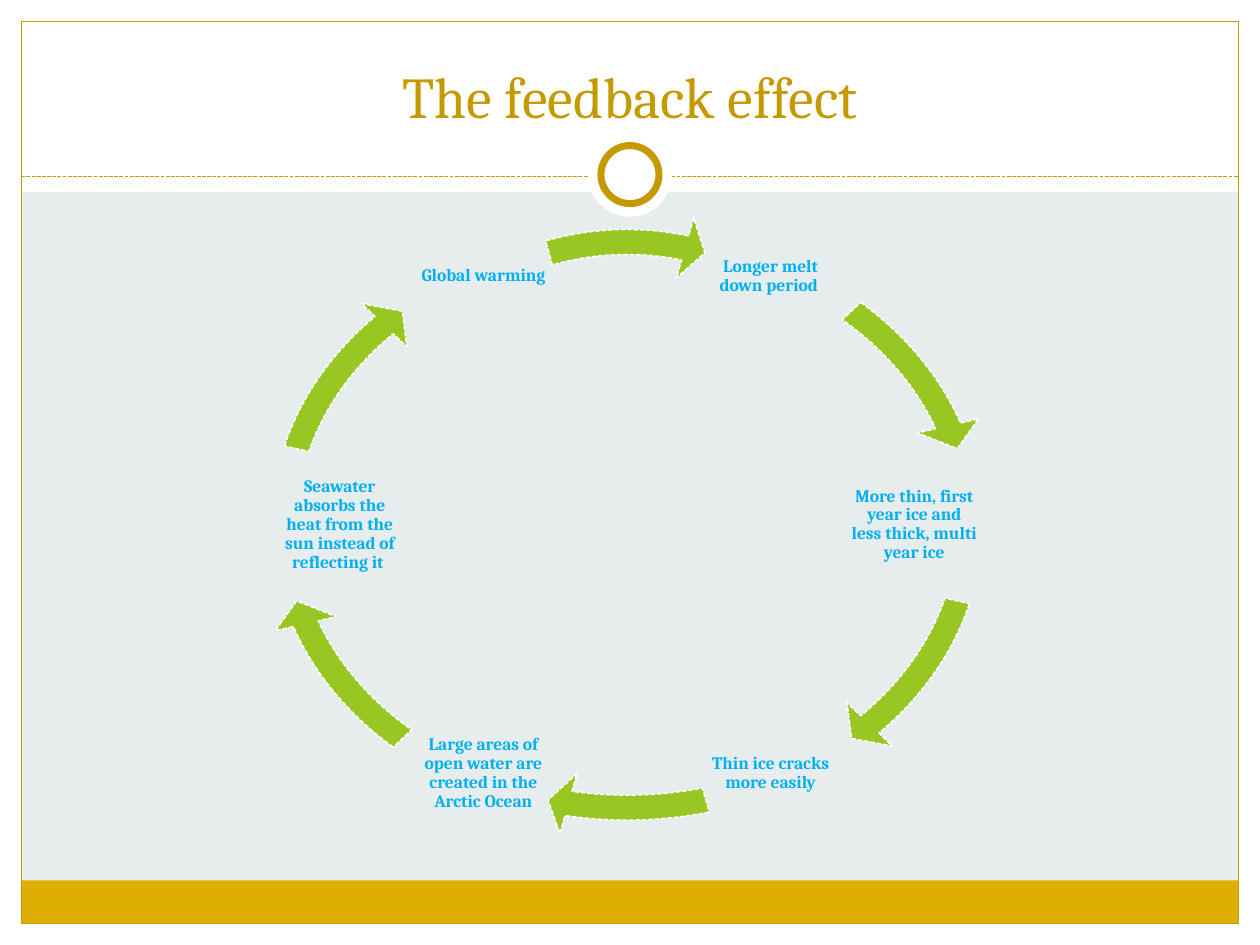
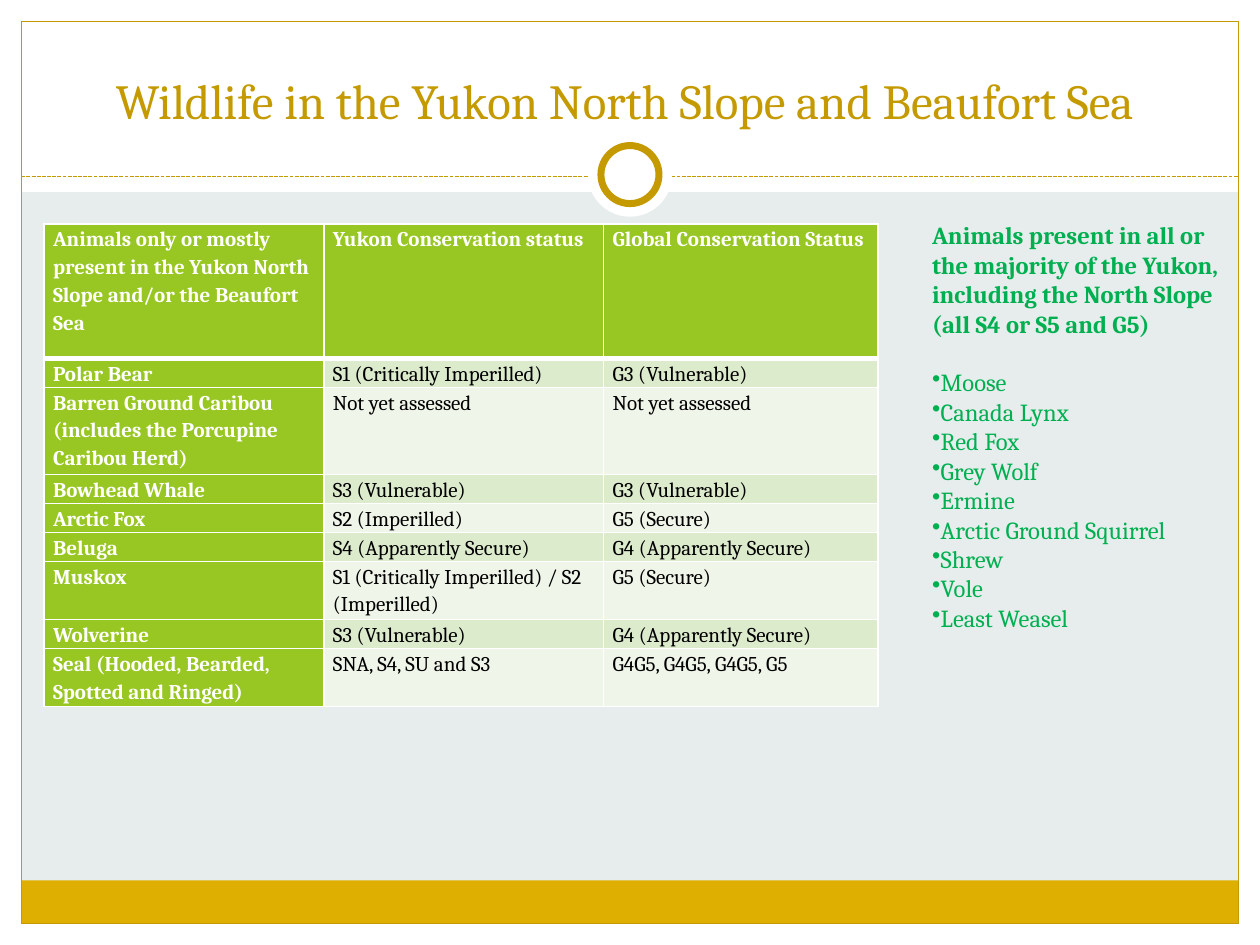
import math

from lxml import etree
from pptx import Presentation
from pptx import util as u
from pptx.dml.color import RGBColor
from pptx.enum import dml, shapes, text
from pptx.oxml import ns

# Content
FEEDBACK_TITLE = "The feedback effect"
FEEDBACK_STEPS = [  # clockwise, from the upper right
    "Longer melt down period ",
    "More thin, first year ice and less thick, multi year ice",
    "Thin ice cracks more easily",
    "Large areas of open water are created in the Arctic Ocean",
    "Seawater absorbs the heat from the sun instead of reflecting it ",
    "Global warming",
]

WILDLIFE_TITLE = "Wildlife in the Yukon North Slope and Beaufort Sea "
STATUS_HEADER = (
    "Animals only or mostly present in the Yukon North Slope and/or the Beaufort Sea",
    "Yukon Conservation status",
    "Global Conservation Status",
)
STATUS_ROWS = [  # text lines in the row, then its cells
    (1, ("Polar Bear", "S1 (Critically Imperilled)", "G3 (Vulnerable)")),
    (3, ("Barren Ground Caribou (includes the Porcupine Caribou Herd)",
         "Not yet assessed", "Not yet assessed")),
    (1, ("Bowhead Whale", "S3 (Vulnerable)", "G3 (Vulnerable)")),
    (1, ("Arctic Fox", "S2 (Imperilled)", "G5 (Secure)")),
    (1, ("Beluga", "S4 (Apparently Secure)", "G4 (Apparently Secure)")),
    (2, ("Muskox", "S1 (Critically Imperilled) / S2 (Imperilled)", "G5 (Secure)")),
    (1, ("Wolverine", "S3 (Vulnerable)", "G4 (Apparently Secure)")),
    (2, ("Seal (Hooded, Bearded, Spotted and Ringed)",
         "SNA, S4, SU and S3", "G4G5, G4G5, G4G5, G5")),
]
COMMON_HEADING = ("Animals present in all or the majority of the Yukon, "
                  "including the North Slope (all S4 or S5 and G5)")
COMMON_ANIMALS = ["Moose", "Canada Lynx", "Red Fox", "Grey Wolf", "Ermine",
                  "Arctic Ground Squirrel", "Shrew", "Vole", "Least Weasel"]

# Shared look, lengths in cm
FONT = "Cambria"
WHITE, BLACK, GROUND = "FFFFFF", "000000", "E7ECED"
GOLD, AMBER, GREEN = "C49A00", "DEAE00", "98C723"
SKY, LEAF = "00B0F0", "00B050"
STRIPES = ("DDEBCD", "EFF5E8")
WIDTH, HEIGHT, MARGIN = 25.4, 19.05, 0.43
RULE_Y, RING_Y = 3.56, 3.52
SHAPE = shapes.MSO_SHAPE
SYS_DASH = dml.MSO_LINE.SQUARE_DOT


def rgb(color):
    return RGBColor.from_string(color)


def box(left, top, width, height):
    return [u.Cm(length) for length in (left, top, width, height)]


def set_line(line, color, points, dash=None):
    line.color.rgb = rgb(color)
    line.width = u.Pt(points)
    if dash:
        line.dash_style = dash


def add_shape(slide, kind, place, fill=None, line=None):
    shape = slide.shapes.add_shape(kind, *box(*place))
    shape.shadow.inherit = False
    if fill:
        shape.fill.solid()
        shape.fill.fore_color.rgb = rgb(fill)
    else:
        shape.fill.background()
    if line:
        set_line(shape.line, *line)
    else:
        shape.line.fill.background()
    return shape


def style(paragraph, size, color, bold=False, align=text.PP_ALIGN.LEFT, spacing=None):
    paragraph.font.name = FONT
    paragraph.font.size = u.Pt(size)
    paragraph.font.color.rgb = rgb(color)
    paragraph.font.bold = bold
    paragraph.alignment = align
    if spacing:
        paragraph.line_spacing = spacing


def add_text(slide, place, words, anchor, **look):
    frame = slide.shapes.add_textbox(*box(*place)).text_frame
    frame.word_wrap = True
    frame.vertical_anchor = anchor
    frame.text = words
    style(frame.paragraphs[0], **look)
    return frame


def add_slide(deck, title, title_size):
    slide = deck.slides.add_slide(deck.slide_layouts[6])
    slide.background.fill.solid()
    slide.background.fill.fore_color.rgb = rgb(GROUND)

    # White edges, bottom band and frame
    inner = WIDTH - 2 * MARGIN
    for edge in [(0, HEIGHT - MARGIN, WIDTH, MARGIN), (0, 0, WIDTH, 3.87),
                 (0, 0, MARGIN, HEIGHT), (WIDTH - MARGIN, 0, MARGIN, HEIGHT)]:
        add_shape(slide, SHAPE.RECTANGLE, edge, WHITE)
    add_shape(slide, SHAPE.RECTANGLE, (MARGIN, 17.75, inner, 0.87), AMBER)
    add_shape(slide, SHAPE.RECTANGLE, (MARGIN, MARGIN, inner, HEIGHT - 2 * MARGIN),
              line=(GOLD, 0.75))

    # Dashed rule with the ring on it
    rule = slide.shapes.add_connector(
        shapes.MSO_CONNECTOR.STRAIGHT,
        *box(MARGIN, RULE_Y, WIDTH - MARGIN, RULE_Y))
    set_line(rule.line, GOLD, 0.75, SYS_DASH)
    etree.SubElement(rule._element.spPr, ns.qn("a:effectLst"))
    for size, line in [(1.7, None), (1.17, (GOLD, 4))]:
        add_shape(slide, SHAPE.OVAL,
                  (WIDTH / 2 - size / 2, RING_Y - size / 2, size, size), WHITE, line)

    add_text(slide, (0.85, 0.64, 23.7, 2.1), title, text.MSO_ANCHOR.BOTTOM,
             size=title_size, color=GOLD, align=text.PP_ALIGN.CENTER)
    return slide


def build_feedback(deck):
    slide = add_slide(deck, FEEDBACK_TITLE, 33)
    center_x, center_y, radius, label = 12.64, 10.58, 5.79, 2.59
    cycle_height = 12.67
    half_turn = [(316.4, 342.87), (12.96, 39.42), (73.99, 101.84)]  # degrees

    for i, step in enumerate(FEEDBACK_STEPS):
        # Labels sit every 60 degrees on a circle
        angle = math.radians(60 * (i - 1))
        x = center_x + radius * math.cos(angle)
        y = center_y + radius * math.sin(angle)
        frame = add_text(slide, (x - label / 2, y - label / 2, label, label), step,
                         text.MSO_ANCHOR.MIDDLE, size=10, color=SKY, bold=True,
                         align=text.PP_ALIGN.CENTER, spacing=0.9)
        frame.margin_left = frame.margin_right = u.Cm(0.02)
        frame.margin_top = frame.margin_bottom = u.Cm(0.02)

        # Arrow to the next label; only the last one is round
        last = i == len(FEEDBACK_STEPS) - 1
        cycle_width = cycle_height if last else 15.09
        arrow = add_shape(slide, SHAPE.CIRCULAR_ARROW,
                          (center_x - cycle_width / 2, center_y - cycle_height / 2,
                           cycle_width, cycle_height),
                          GREEN, (WHITE, 0.9, SYS_DASH))
        start, end = [(a + 180 * (i // 3)) % 360 for a in half_turn[i % 3]]
        # Adjustments count angles in units of 5/3 degree
        for k, value in enumerate((0.04, 2.5, end * 0.6, start * 0.6, 0.05)):
            arrow.adjustments[k] = value


def set_border(cell, side, points):
    line = etree.SubElement(cell._tc.get_or_add_tcPr(), ns.qn(f"a:ln{side}"),
                            w=str(u.Pt(points)))
    fill = etree.SubElement(line, ns.qn("a:solidFill"))
    etree.SubElement(fill, ns.qn("a:srgbClr"), val=WHITE)


def fill_cell(cell, words, row, column):
    heading = row == 0 or column == 0
    thick = {0: "B", 1: "T"}.get(row)  # the line under the header
    for side in "LRTB":
        set_border(cell, side, 3 if side == thick else 1)
    cell.fill.solid()
    cell.fill.fore_color.rgb = rgb(GREEN if heading else STRIPES[(row - 1) % 2])
    cell.margin_left = cell.margin_right = u.Cm(0.18)
    cell.margin_top = cell.margin_bottom = 0
    cell.text = words
    style(cell.text_frame.paragraphs[0], 12, WHITE if heading else BLACK,
          heading, spacing=1.15)


def build_wildlife(deck):
    slide = add_slide(deck, WILDLIFE_TITLE, 28)

    # Conservation status table
    widths = (5.64, 5.64, 5.53)
    heights = [2.71] + [0.56 * lines for lines, _ in STATUS_ROWS]
    rows = [STATUS_HEADER] + [cells for _, cells in STATUS_ROWS]
    status = slide.shapes.add_table(
        len(rows), len(widths), *box(0.89, 4.52, sum(widths), sum(heights))).table
    status.first_row = status.horz_banding = False
    for column, width in zip(status.columns, widths):
        column.width = u.Cm(width)
    for r, (height, cells) in enumerate(zip(heights, rows)):
        status.rows[r].height = u.Cm(height)
        for c, words in enumerate(cells):
            fill_cell(status.cell(r, c), words, r, c)

    # Animals found all over the territory
    frame = add_text(slide, (18.54, 4.32, 6.35, 9.25), COMMON_HEADING,
                     text.MSO_ANCHOR.TOP, size=14, color=LEAF, bold=True)
    frame.paragraphs[0].space_after = u.Pt(16.75)
    for animal in COMMON_ANIMALS:
        item = frame.add_paragraph()
        item.text = animal
        style(item, 14, LEAF)
        properties = item._p.get_or_add_pPr()
        bullet = etree.Element(ns.qn("a:buChar"), char="•")
        properties.insert_element_before(bullet, "a:tabLst", "a:defRPr", "a:extLst")


def main():
    deck = Presentation()
    deck.slide_width, deck.slide_height = u.Cm(WIDTH), u.Cm(HEIGHT)
    build_feedback(deck)
    build_wildlife(deck)
    deck.save("out.pptx")


if __name__ == "__main__":
    main()
